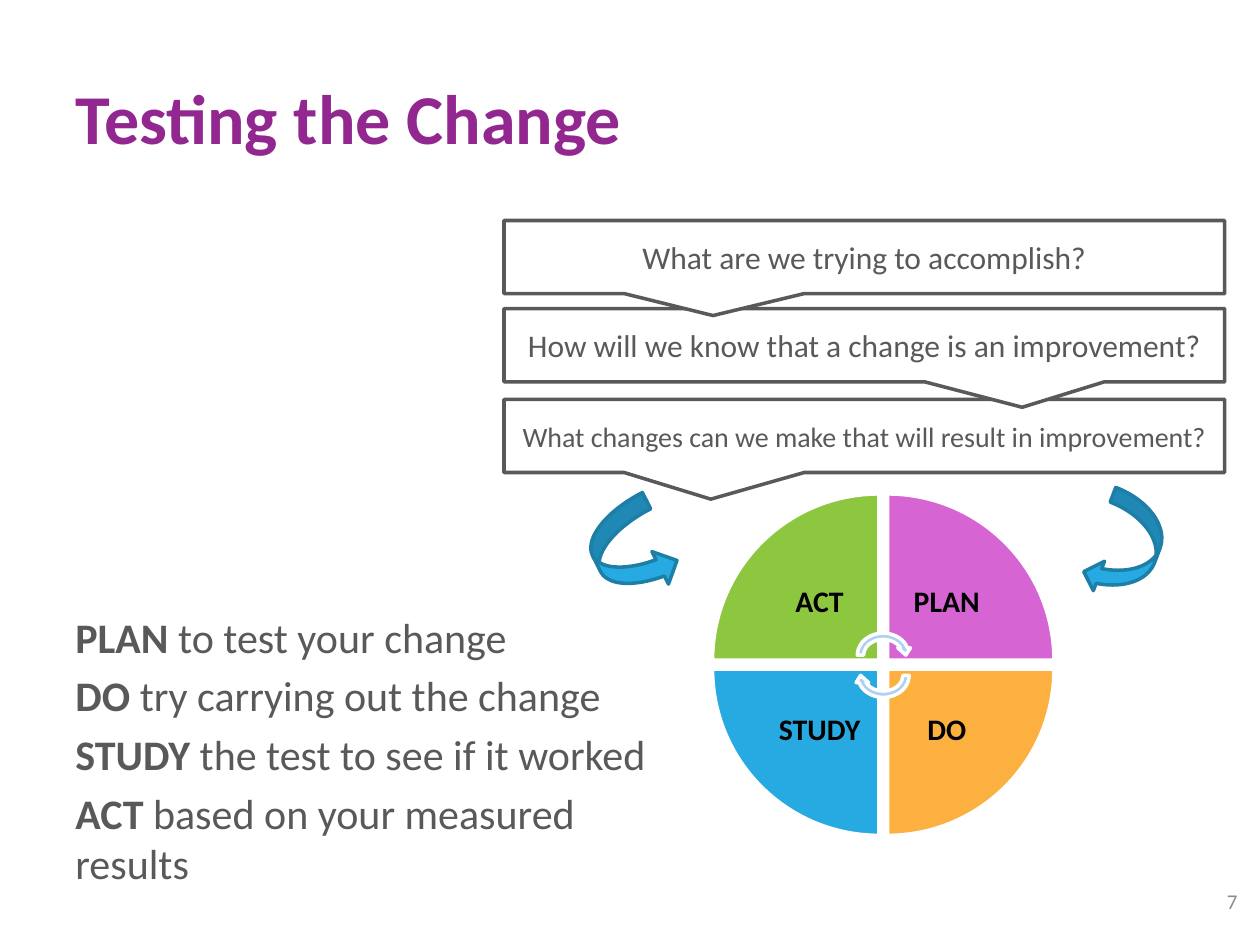
from pptx import Presentation
from pptx.dml.color import RGBColor
from pptx.enum.shapes import MSO_SHAPE
from pptx.enum.text import MSO_ANCHOR, PP_ALIGN
from pptx.util import Inches, Pt

WEDGE = MSO_SHAPE.PIE_WEDGE
CYCLE = MSO_SHAPE.CIRCULAR_ARROW
CALLOUT = MSO_SHAPE.RECTANGULAR_CALLOUT
CURVED_RIGHT = MSO_SHAPE.CURVED_RIGHT_ARROW
CURVED_LEFT = MSO_SHAPE.CURVED_LEFT_ARROW
TOP, MIDDLE = MSO_ANCHOR.TOP, MSO_ANCHOR.MIDDLE
LEFT, CENTER, RIGHT = PP_ALIGN.LEFT, PP_ALIGN.CENTER, PP_ALIGN.RIGHT

WHITE = RGBColor(0xFF, 0xFF, 0xFF)
BLACK = RGBColor(0, 0, 0)
PURPLE = RGBColor(0x92, 0x27, 0x8F)
GRAY = RGBColor(0x58, 0x59, 0x5B)
LIGHT_GRAY = RGBColor(0x8C, 0x8C, 0x8C)
GREEN = RGBColor(0x8D, 0xC6, 0x3F)
PINK = RGBColor(0xD6, 0x65, 0xD3)
ORANGE = RGBColor(0xFB, 0xB0, 0x40)
BLUE = RGBColor(0x27, 0xAA, 0xE1)
DARK_BLUE = RGBColor(0x1D, 0x7E, 0xA6)
PALE_BLUE = RGBColor(0xAD, 0xD1, 0xEE)

FONT = "Calibri"
MARGIN = 0.5
WHEEL_X, WHEEL_Y = 7.01, 5.275
WEDGE_SIZE, WEDGE_GAP, LABEL_SIZE = 1.32, 0.07, 0.94

STEPS = [
    ("PLAN", " to test your change"),
    ("DO", " try carrying out the change"),
    ("STUDY", " the test to see if it worked"),
    ("ACT", " based on your measured results"),
]
QUADRANTS = [
    ("ACT", GREEN, 0, 0),
    ("PLAN", PINK, 1, 0),
    ("DO", ORANGE, 1, 1),
    ("STUDY", BLUE, 0, 1),
]
QUESTIONS = [
    ("What changes can we make that will result in improvement?", 3.17, 16, (-0.213, 0.865)),
    ("How will we know that a change is an improvement?", 2.45, 18, (0.219, 0.849)),
    ("What are we trying to accomplish?", 1.75, 18, (-0.21, 0.801)),
]


def inches(bounds):
    return [Inches(value) for value in bounds]


def add_span(para, text, size, color, bold=False):
    span = para.add_run()
    span.text = text
    style = {"name": FONT, "size": Pt(size), "bold": bold}
    for name, value in style.items():
        setattr(span.font, name, value)
    span.font.color.rgb = color


def set_frame(frame, anchor, margin=None):
    frame.word_wrap = True
    frame.vertical_anchor = anchor
    if margin is not None:
        for side in ("left", "right", "top", "bottom"):
            setattr(frame, f"margin_{side}", Inches(margin))


def write_line(frame, text, size, color, align, bold=False, margin=None):
    set_frame(frame, MIDDLE, margin)
    para = frame.paragraphs[0]
    para.alignment = align
    add_span(para, text, size, color, bold)


def add_label(page, bounds, *text_format, **options):
    box = page.shapes.add_textbox(*inches(bounds))
    write_line(box.text_frame, *text_format, **options)


def add_figure(page, kind, bounds, fill, line, rotation=0):
    figure = page.shapes.add_shape(kind, *inches(bounds))
    figure.shadow.inherit = False
    figure.rotation = rotation
    figure.fill.solid()
    figure.fill.fore_color.rgb = fill
    figure.line.color.rgb = line
    figure.line.width = Pt(2)
    return figure


def set_title(page, text):
    title = page.shapes.title
    title.left, title.top, title.width, title.height = inches((MARGIN, 0.3, 5.67, 1.25))
    write_line(title.text_frame, text, 40, PURPLE, LEFT, bold=True)


def add_steps(page):
    box = page.shapes.add_textbox(*inches((MARGIN, 4.8, 4.75, 2.58)))
    frame = box.text_frame
    set_frame(frame, TOP)
    for index, (step, detail) in enumerate(STEPS):
        para = frame.add_paragraph() if index else frame.paragraphs[0]
        para.alignment = LEFT
        para.space_before = Pt(4.8 if index else 0)
        add_span(para, step, 24, GRAY, bold=True)
        add_span(para, detail, 24, GRAY)


def quadrant_bounds(size, column, row):
    near = WEDGE_GAP / 2
    left = WHEEL_X + (near if column else -near - size)
    top = WHEEL_Y + (near if row else -near - size)
    return left, top, size, size


def add_wheel(page):
    for turn, (step, color, column, row) in enumerate(QUADRANTS):
        add_figure(page, WEDGE, quadrant_bounds(WEDGE_SIZE, column, row),
                   color, WHITE, 90 * turn)
        add_label(page, quadrant_bounds(LABEL_SIZE, column, row),
                  step, 17, BLACK, CENTER, bold=True, margin=0.13)
    for top, rotation in ((5, 0), (5.16, 180)):
        add_figure(page, CYCLE, (WHEEL_X - 0.23, top, 0.46, 0.4),
                   PALE_BLUE, WHITE, rotation)


def add_questions(page):
    for question, top, size, tip in QUESTIONS:
        callout = add_figure(page, CALLOUT, (4, top, 5.72, 0.58), WHITE, GRAY)
        for index, value in enumerate(tip):
            callout.adjustments[index] = value
        write_line(callout.text_frame, question, size, GRAY, CENTER)


def main():
    deck = Presentation()
    deck.slide_width, deck.slide_height = inches((10, 7.5))
    page = deck.slides.add_slide(deck.slide_layouts[5])
    set_title(page, "Testing the Change")
    add_steps(page)
    add_wheel(page)
    add_questions(page)
    add_figure(page, CURVED_RIGHT, (4.72, 4, 0.58, 0.75), BLUE, DARK_BLUE, 333)
    add_figure(page, CURVED_LEFT, (8.69, 3.93, 0.5, 0.84), BLUE, DARK_BLUE, 20.8)
    add_label(page, (9.42, 6.95, 0.5, 0.4), "7", 12, LIGHT_GRAY, RIGHT)
    deck.save("out.pptx")


if __name__ == "__main__":
    main()
